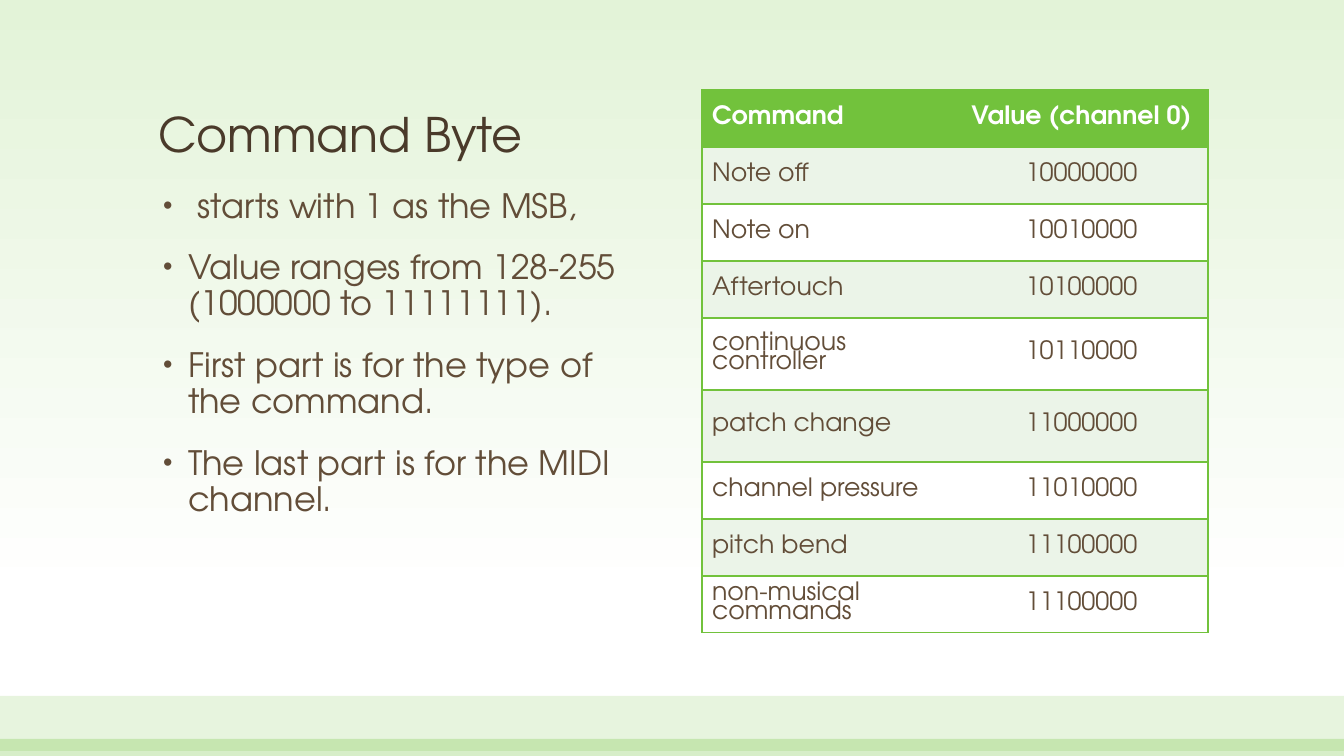
from lxml.etree import SubElement as Sub
from pptx import Presentation
from pptx.dml.color import RGBColor
from pptx.enum.shapes import MSO_SHAPE as Shape
from pptx.enum.text import MSO_ANCHOR as Anchor, MSO_AUTO_SIZE as Auto, PP_ALIGN as Align
from pptx.oxml.ns import qn
from pptx.util import Pt

PX = 914400 / 100.8
FONT = "TeX Gyre Adventor"
GREEN = RGBColor(0x72, 0xC2, 0x3C)
PALE = RGBColor(0xE3, 0xF3, 0xD8)
MINT = RGBColor(0xEB, 0xF4, 0xE8)
WHITE = RGBColor(0xFF, 0xFF, 0xFF)
DARK = RGBColor(0x4A, 0x3A, 0x2A)
BROWN = RGBColor(0x62, 0x4D, 0x38)

POINTS = [
    " starts with 1 as the MSB,",
    "Value ranges from 128-255 (1000000 to 11111111).",
    "First part is for the type of the command.",
    "The last part is for the MIDI channel.",
]
ROWS = [
    ("Command", "Value (channel 0)", 57),
    ("Note off", "10000000", 57),
    ("Note on", "10010000", 57),
    ("Aftertouch", "10100000", 57),
    ("continuous controller", "10110000", 72),
    ("patch change", "11000000", 72),
    ("channel pressure", "11010000", 57),
    ("pitch bend", "11100000", 57),
    ("non-musical commands", "11100000", 57),
]


def px(*nums):
    return [round(n * PX) for n in nums]


def write(para, text, size, color, bold=False, align=Align.LEFT, line=0.9, before=0):
    para.alignment = align
    para.line_spacing = line
    para.space_before = Pt(before)
    run = para.add_run()
    run.text = text
    font = run.font
    font.name, font.size, font.bold = FONT, Pt(size), bold
    font.color.rgb = color


deck = Presentation()
deck.slide_width, deck.slide_height = px(1344, 756)
slide = deck.slides.add_slide(deck.slide_layouts[1])
shapes = slide.shapes

# Background
back = slide.background.fill
back.gradient()
back.gradient_angle = 270
for stop, color, pos in zip(back.gradient_stops, (PALE, WHITE), (0, 0.79)):
    stop.color.rgb = color
    stop.position = pos

# Footer bands, behind everything else
for i, (top, height, alpha) in enumerate([(696, 55, 17), (739, 17, 28)]):
    band = shapes.add_shape(Shape.RECTANGLE, *px(0, top, 1344, height))
    band.shadow.inherit = False
    band.line.fill.background()
    band.fill.solid()
    band.fill.fore_color.rgb = GREEN
    tint = band.fill._xPr.find(".//" + qn("a:srgbClr"))
    Sub(tint, qn("a:alpha"), val=str(alpha * 1000))
    shapes._spTree.insert(2 + i, band._element)

# Title and list
title, body = shapes.title, slide.placeholders[1]
for holder, box, anchor in [
    (title, (148, 48, 1048, 120), Anchor.BOTTOM),
    (body, (148, 184, 504, 479), Anchor.TOP),
]:
    holder.left, holder.top, holder.width, holder.height = px(*box)
    frame = holder.text_frame
    frame.auto_size = Auto.NONE
    frame.word_wrap = True
    frame.vertical_anchor = anchor

write(title.text_frame.paragraphs[0], "Command Byte", 34, DARK)
frame = body.text_frame
for i, text in enumerate(POINTS):
    para = frame.add_paragraph() if i else frame.paragraphs[0]
    write(para, text, 24, BROWN, before=18)
    props = para._p.get_or_add_pPr()
    left, hang = px(30, -25)
    props.set("marL", str(left))
    props.set("indent", str(hang))
    Sub(props, qn("a:buSzPct"), val="80000")
    Sub(props, qn("a:buChar"), char="•")

# Command table
height = sum(row[-1] for row in ROWS)
table = shapes.add_table(len(ROWS), 2, *px(702, 90, 506, height)).table
for col in table.columns:
    col.width = px(253)[0]
for r, (*texts, tall) in enumerate(ROWS):
    table.rows[r].height = px(tall)[0]
    for c, text in enumerate(texts):
        cell = table.cell(r, c)
        cell.vertical_anchor = Anchor.MIDDLE
        cell.margin_top = cell.margin_bottom = px(3)[0]
        write(cell.text_frame.paragraphs[0], text, 18, BROWN if r else WHITE,
              bold=r == 0, align=Align.CENTER if c else Align.LEFT, line=0.8)
        inner = "L" if c else "R"
        for side in "LRTB":
            edge = Sub(cell._tc.get_or_add_tcPr(), qn("a:ln" + side), w=str(Pt(1)))
            if side == inner:
                Sub(edge, qn("a:noFill"))
            else:
                Sub(Sub(edge, qn("a:solidFill")), qn("a:srgbClr"), val=str(GREEN))
        cell.fill.solid()
        cell.fill.fore_color.rgb = GREEN if r == 0 else MINT if r % 2 else WHITE

deck.save("out.pptx")
